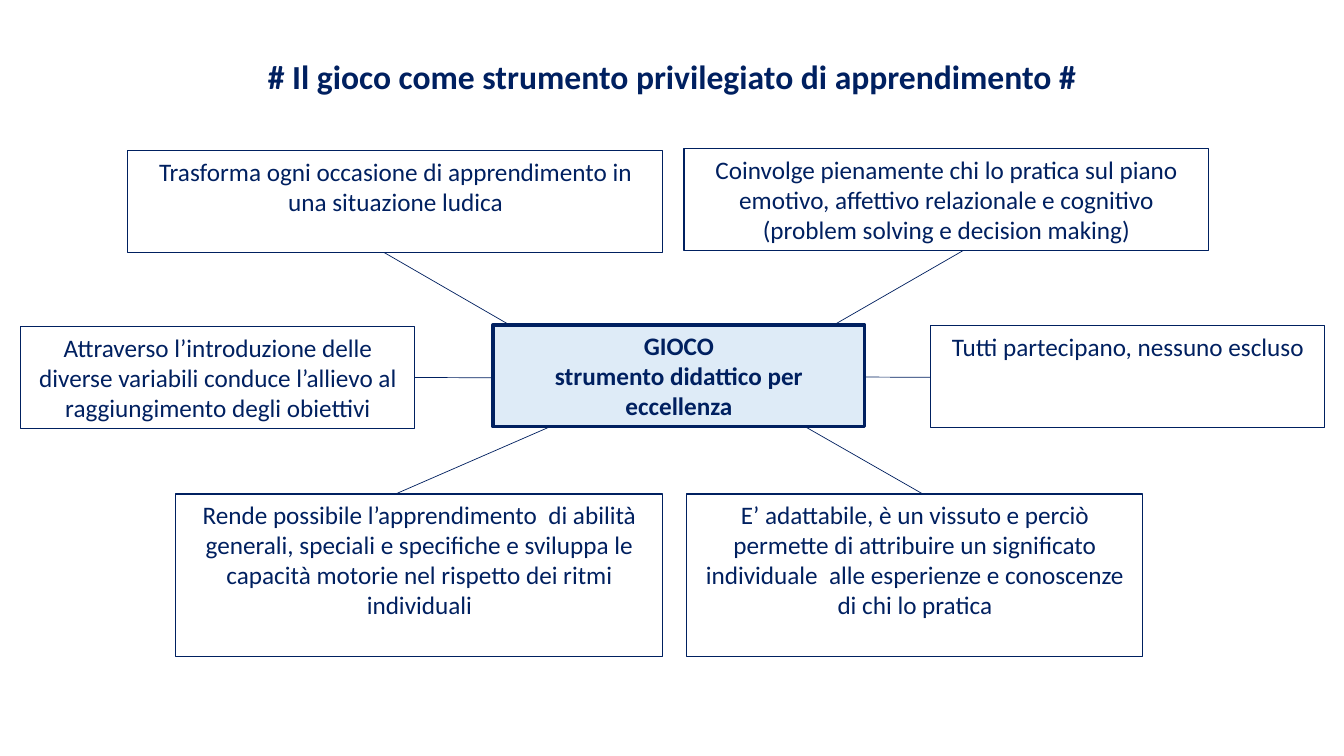
from dataclasses import dataclass

from lxml.etree import SubElement
from pptx import Presentation
from pptx.dml.color import RGBColor
from pptx.enum.shapes import MSO_CONNECTOR as Connector, MSO_SHAPE as Shape
from pptx.enum.text import MSO_ANCHOR as Anchor, PP_ALIGN as Align
from pptx.oxml.ns import qn
from pptx.slide import Slide
from pptx.text.text import TextFrame
from pptx.util import Emu, Pt

EMU_PER_PX = 914400 / 100.8


@dataclass(frozen=True)
class Theme:
    font: str = "Calibri"
    navy: RGBColor = RGBColor(0x00, 0x20, 0x60)
    white: RGBColor = RGBColor(0xFF, 0xFF, 0xFF)
    pale_blue: RGBColor = RGBColor(0xDE, 0xEB, 0xF7)
    title_size: Pt = Pt(24)
    body_size: Pt = Pt(18)
    spoke_width: Pt = Pt(0.5)
    idea_border: Pt = Pt(0.75)
    hub_border: Pt = Pt(2.25)


@dataclass(frozen=True)
class Idea:
    left: int
    top: int
    width: int
    height: int
    lines: tuple[str, ...]
    is_hub: bool = False


@dataclass(frozen=True)
class Spoke:
    x1: int
    y1: int
    x2: int
    y2: int


THEME = Theme()
LOW, HIGH = 102, 163
TITLE = "# Il gioco come strumento privilegiato di apprendimento #"

SPOKES = (
    Spoke(783, 414, 1005, 541),
    Spoke(248, 377, 570, 378),
    Spoke(836, 377, 1156, 378),
    Spoke(333, 223, 636, 398),
    Spoke(985, 238, 707, 398),
    Spoke(368, 506, 623, 395),
)

IDEAS = (
    Idea(21, 327, 394, LOW, (
        "Attraverso l’introduzione delle diverse variabili conduce "
        "l’allievo al raggiungimento degli obiettivi",)),
    Idea(931, 326, 394, LOW, ("Tutti partecipano, nessuno escluso",)),
    Idea(687, 494, 456, HIGH, (
        "E’ adattabile, è un vissuto e perciò permette di attribuire un "
        "significato individuale  alle esperienze e conoscenze di chi lo pratica",)),
    Idea(176, 494, 487, HIGH, (
        "Rende possibile l’apprendimento  di abilità generali, speciali e specifiche "
        "e sviluppa le capacità motorie nel rispetto dei ritmi individuali",)),
    Idea(128, 151, 535, LOW, (
        "Trasforma ogni occasione di apprendimento in una situazione ludica",)),
    Idea(493, 325, 372, LOW, ("GIOCO", "strumento didattico per eccellenza"), is_hub=True),
    Idea(684, 149, 525, LOW, (
        "Coinvolge pienamente chi lo pratica sul piano emotivo, affettivo "
        "relazionale e cognitivo",
        "(problem solving e decision making)")),
)


def px(length: int) -> Emu:
    return Emu(round(length * EMU_PER_PX))


def write(frame: TextFrame, lines: tuple[str, ...], size: Pt, bold: bool,
          spacing: float = 1.0) -> None:
    frame.word_wrap = True
    frame.vertical_anchor = Anchor.TOP
    frame.text = "\n".join(lines)
    for paragraph in frame.paragraphs:
        paragraph.alignment = Align.CENTER
        paragraph.line_spacing = spacing
        paragraph.font.name = THEME.font
        paragraph.font.size = size
        paragraph.font.bold = bold
        paragraph.font.color.rgb = THEME.navy


def draw_spoke(slide: Slide, spoke: Spoke) -> None:
    line = slide.shapes.add_connector(
        Connector.STRAIGHT, px(spoke.x1), px(spoke.y1), px(spoke.x2), px(spoke.y2))
    line.line.color.rgb = THEME.navy
    line.line.width = THEME.spoke_width
    SubElement(line._element.spPr, qn("a:effectLst"))


def draw_idea(slide: Slide, idea: Idea) -> None:
    box = slide.shapes.add_shape(
        Shape.RECTANGLE, px(idea.left), px(idea.top), px(idea.width), px(idea.height))
    box.shadow.inherit = False
    box.fill.solid()
    box.fill.fore_color.rgb = THEME.pale_blue if idea.is_hub else THEME.white
    box.line.color.rgb = THEME.navy
    box.line.width = THEME.hub_border if idea.is_hub else THEME.idea_border
    write(box.text_frame, idea.lines, THEME.body_size, idea.is_hub)


def main() -> None:
    deck = Presentation()
    deck.slide_width, deck.slide_height = px(1344), px(756)
    slide = deck.slides.add_slide(deck.slide_layouts[6])
    title = slide.shapes.add_textbox(px(0), px(31), px(1344), px(72))
    write(title.text_frame, (TITLE,), THEME.title_size, True, 1.5)
    for spoke in SPOKES:
        draw_spoke(slide, spoke)
    for idea in IDEAS:
        draw_idea(slide, idea)
    deck.save("out.pptx")


if __name__ == "__main__":
    main()
